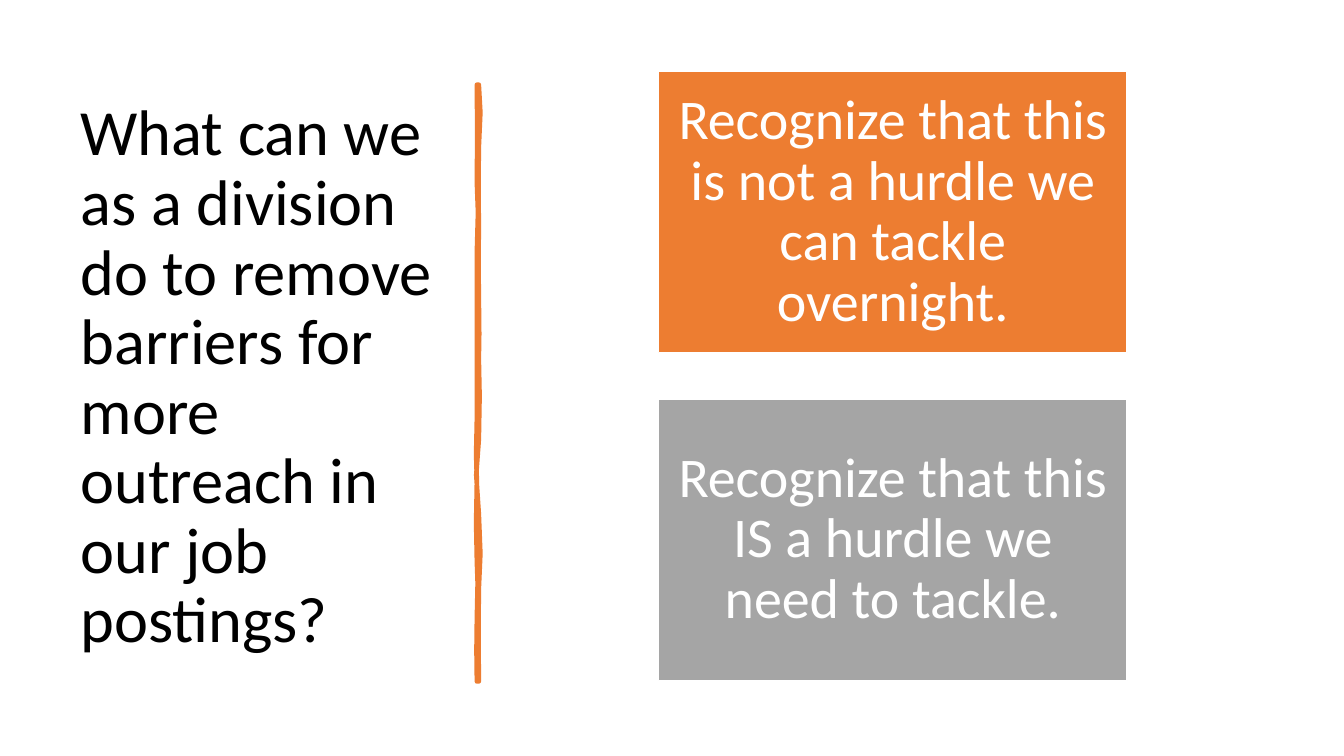
from dataclasses import dataclass

from pptx import Presentation
from pptx.dml.color import RGBColor
from pptx.enum.shapes import MSO_SHAPE as Shape
from pptx.enum.text import MSO_ANCHOR as Anchor, MSO_AUTO_SIZE as Fit, PP_ALIGN as Align
from pptx.util import Pt

PX = 9144  # EMU per px, 100 px to the inch
COLORS = {"orange": "ED7D31", "gray": "A5A5A5", "white": "FFFFFF", "black": "000000"}
FONT = "Calibri"
STEPS = 2  # line segments per curve


@dataclass
class Card:
    text: str
    fill: str


CARDS = [
    Card("Recognize that this is not a hurdle we can tackle overnight.", "orange"),
    Card("Recognize that this IS a hurdle we need to tackle.", "gray"),
]
LEFT, TOP, WIDTH, HEIGHT, PITCH = 653, 71, 465, 279, 325

# Wavy rule: each curve is two control points and an end point
START = (475, 84)
CURVES = [
    # Right edge, downward
    ((477, 102), (477, 119), (475, 146)),
    ((473, 173), (476, 195), (475, 226)),
    ((474, 257), (475, 262), (475, 294)),
    ((474, 325), (477, 342), (475, 356)),
    ((473, 370), (479, 414), (475, 436)),
    ((471, 457), (472, 484), (475, 510)),
    ((477, 536), (477, 564), (475, 584)),
    ((473, 603), (476, 650), (475, 676)),
    ((474, 676), (473, 676), (473, 676)),
    # Left edge, upward
    ((474, 646), (471, 644), (473, 613)),
    ((474, 583), (474, 570), (473, 557)),
    ((472, 544), (472, 495), (473, 477)),
    ((473, 459), (471, 445), (473, 415)),
    ((474, 386), (472, 373), (473, 335)),
    ((474, 298), (472, 281), (473, 250)),
    ((474, 218), (475, 200), (473, 181)),
    ((470, 163), (477, 104), (473, 84)),
]


def color(name: str) -> RGBColor:
    return RGBColor.from_string(COLORS[name])


def paint(shape, fill: str, line: str, width: float) -> None:
    shape.shadow.inherit = False
    shape.fill.solid()
    shape.fill.fore_color.rgb = color(fill)
    shape.line.color.rgb = color(line)
    shape.line.width = Pt(width)


def write(shape, text: str, *, size: int, ink: str, align: Align, inset: int) -> None:
    frame = shape.text_frame
    frame.word_wrap = True
    frame.auto_size = Fit.NONE
    frame.vertical_anchor = Anchor.MIDDLE
    frame.margin_left = frame.margin_right = inset * PX
    frame.margin_top = frame.margin_bottom = inset * PX
    para = frame.paragraphs[0]
    para.alignment = align
    para.line_spacing = 0.9
    run = para.add_run()
    run.text = text
    run.font.name = FONT
    run.font.size = Pt(size)
    run.font.color.rgb = color(ink)


def trace(start: tuple, curves: list) -> list:
    """Points in EMU along a chain of cubic curves."""
    points = [start]
    for one, two, end in curves:
        first = points[-1]
        for step in range(1, STEPS + 1):
            t = step / STEPS
            u = 1 - t
            points.append(tuple(
                u**3 * a + 3 * u * u * t * b + 3 * u * t * t * c + t**3 * d
                for a, b, c, d in zip(first, one, two, end)
            ))
    return [(round(x * PX), round(y * PX)) for x, y in points]


def add_rule(slide) -> None:
    first, *rest = trace(START, CURVES)
    pen = slide.shapes.build_freeform(*first, scale=1.0)
    pen.add_line_segments(rest, close=True)
    paint(pen.convert_to_shape(), "orange", "orange", 3.25)


def add_card(slide, card: Card, row: int) -> None:
    box = slide.shapes.add_shape(
        Shape.RECTANGLE, LEFT * PX, (TOP + row * PITCH) * PX, WIDTH * PX, HEIGHT * PX
    )
    paint(box, card.fill, "white", 1)
    write(box, card.text, size=40, ink="white", align=Align.CENTER, inset=17)


def main() -> None:
    deck = Presentation()
    deck.slide_width, deck.slide_height = 1333 * PX, 750 * PX
    slide = deck.slides.add_slide(deck.slide_layouts[5])

    # Title
    title = slide.shapes.title
    title.left, title.top, title.width, title.height = (
        n * PX for n in (70, 70, 374, 611)
    )
    write(
        title,
        "What can we as a division do to remove barriers for more outreach in our job postings?",
        size=46, ink="black", align=Align.LEFT, inset=10,
    )

    # Divider and cards
    add_rule(slide)
    for row, card in enumerate(CARDS):
        add_card(slide, card, row)

    deck.save("out.pptx")


if __name__ == "__main__":
    main()
